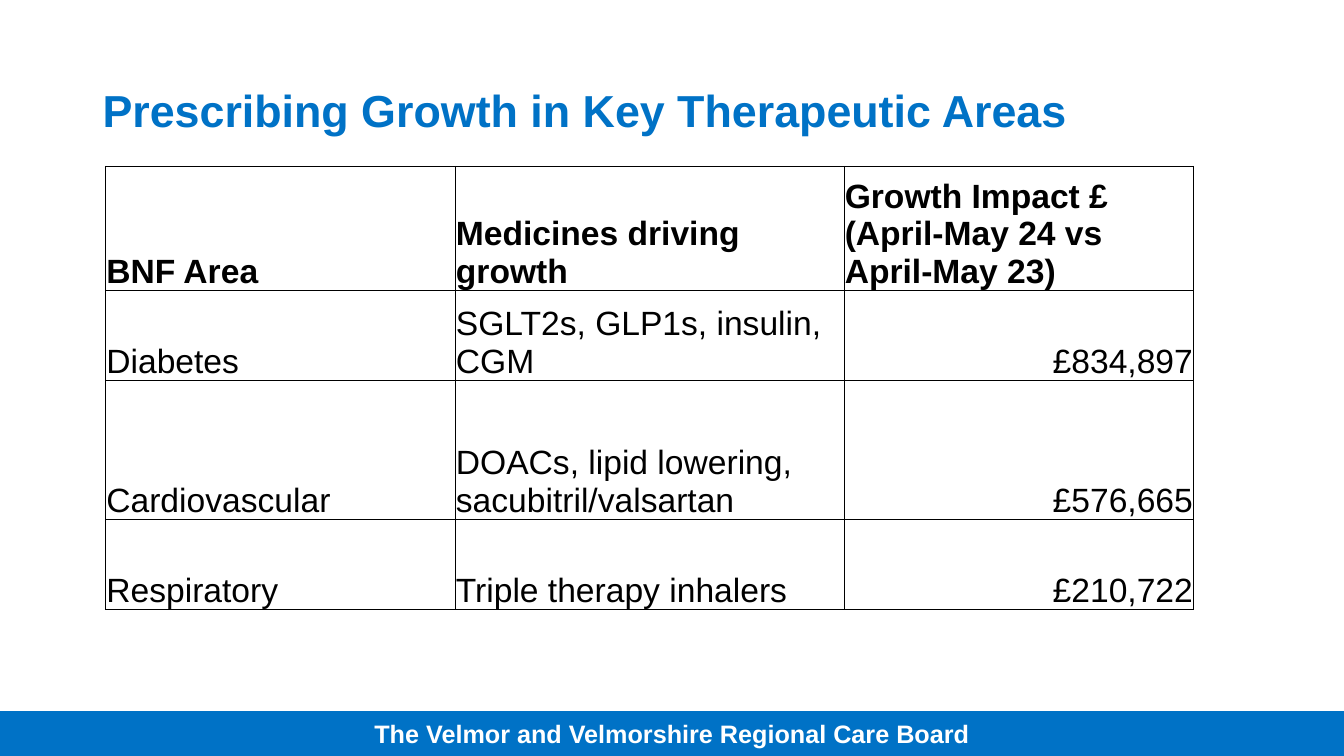
from dataclasses import dataclass
from lxml.etree import SubElement as Sub
from pptx import Presentation
from pptx.dml.color import RGBColor as RGB
from pptx.enum.shapes import MSO_SHAPE as Shape
from pptx.enum.text import MSO_ANCHOR as Anchor, PP_ALIGN as Align
from pptx.oxml.ns import qn
from pptx.util import Cm, Pt


@dataclass(frozen=True)
class Theme:
    font: str = "Arial"
    blue: RGB = RGB(0x00, 0x72, 0xC6)
    white: RGB = RGB(0xFF, 0xFF, 0xFF)
    black: RGB = RGB(0, 0, 0)
    head: Pt = Pt(32)
    body: Pt = Pt(24)
    foot: Pt = Pt(18)
    rule: Pt = Pt(0.5)


theme = Theme()


def style(frame, size, color, bold, align):
    for para in frame.paragraphs:
        para.alignment = align
        for run in para.runs:
            font = run.font
            font.name, font.size, font.bold = theme.font, size, bold
            font.color.rgb = color


def border(cell):
    props = cell._tc.get_or_add_tcPr()
    for side in ("lnL", "lnR", "lnT", "lnB"):
        line = Sub(props, qn(f"a:{side}"), w=str(theme.rule))
        fill = Sub(line, qn("a:solidFill"))
        Sub(fill, qn("a:srgbClr"), val=str(theme.black))


deck = Presentation()
deck.slide_width, deck.slide_height = Cm(33.87), Cm(19.05)
slide = deck.slides.add_slide(deck.slide_layouts[5])

title = slide.shapes.title
title.left, title.top = Cm(2.33), Cm(1)
title.width, title.height = Cm(29.21), Cm(3.68)
frame = title.text_frame
frame.text = "Prescribing Growth in Key Therapeutic Areas"
frame.vertical_anchor = Anchor.MIDDLE
frame.paragraphs[0].line_spacing = 0.9
style(frame, theme.head, theme.blue, True, Align.LEFT)

high = Cm(1.12)
footer = slide.shapes.add_shape(
    Shape.RECTANGLE, 0, deck.slide_height - high, deck.slide_width, high)
footer.shadow.inherit = False
footer.fill.solid()
footer.fill.fore_color.rgb = theme.blue
footer.line.color.rgb = theme.blue
footer.line.width = Pt(1)
frame = footer.text_frame
frame.text = "The Velmor and Velmorshire Regional Care Board"
frame.vertical_anchor = Anchor.MIDDLE
style(frame, theme.foot, theme.white, True, Align.CENTER)

rows = [
    ("BNF Area", "Medicines driving growth",
     "Growth Impact £\v(April-May 24 vs April-May 23)"),
    ("Diabetes", "SGLT2s, GLP1s, insulin, CGM", "£834,897"),
    ("Cardiovascular", "DOACs, lipid lowering, sacubitril/valsartan", "£576,665"),
    ("Respiratory", "Triple therapy inhalers", "£210,722"),
]
wides = [Cm(8.81), Cm(9.8), Cm(8.81)]
highs = [Cm(3.13), Cm(2.26), Cm(3.51), Cm(2.26)]
table = slide.shapes.add_table(
    len(rows), len(wides), Cm(2.66), Cm(4.19), sum(wides), sum(highs)).table
table.horz_banding = False
for col, wide in zip(table.columns, wides):
    col.width = wide
for r, (row, tall) in enumerate(zip(rows, highs)):
    table.rows[r].height = tall
    for c, text in enumerate(row):
        cell = table.cell(r, c)
        cell.text_frame.text = text
        cell.vertical_anchor = Anchor.BOTTOM
        cell.margin_left = cell.margin_right = cell.margin_top = Cm(0.02)
        cell.margin_bottom = 0
        border(cell)
        cell.fill.background()
        align = Align.RIGHT if r and c == 2 else Align.LEFT
        style(cell.text_frame, theme.body, theme.black, r == 0, align)

deck.save("out.pptx")
